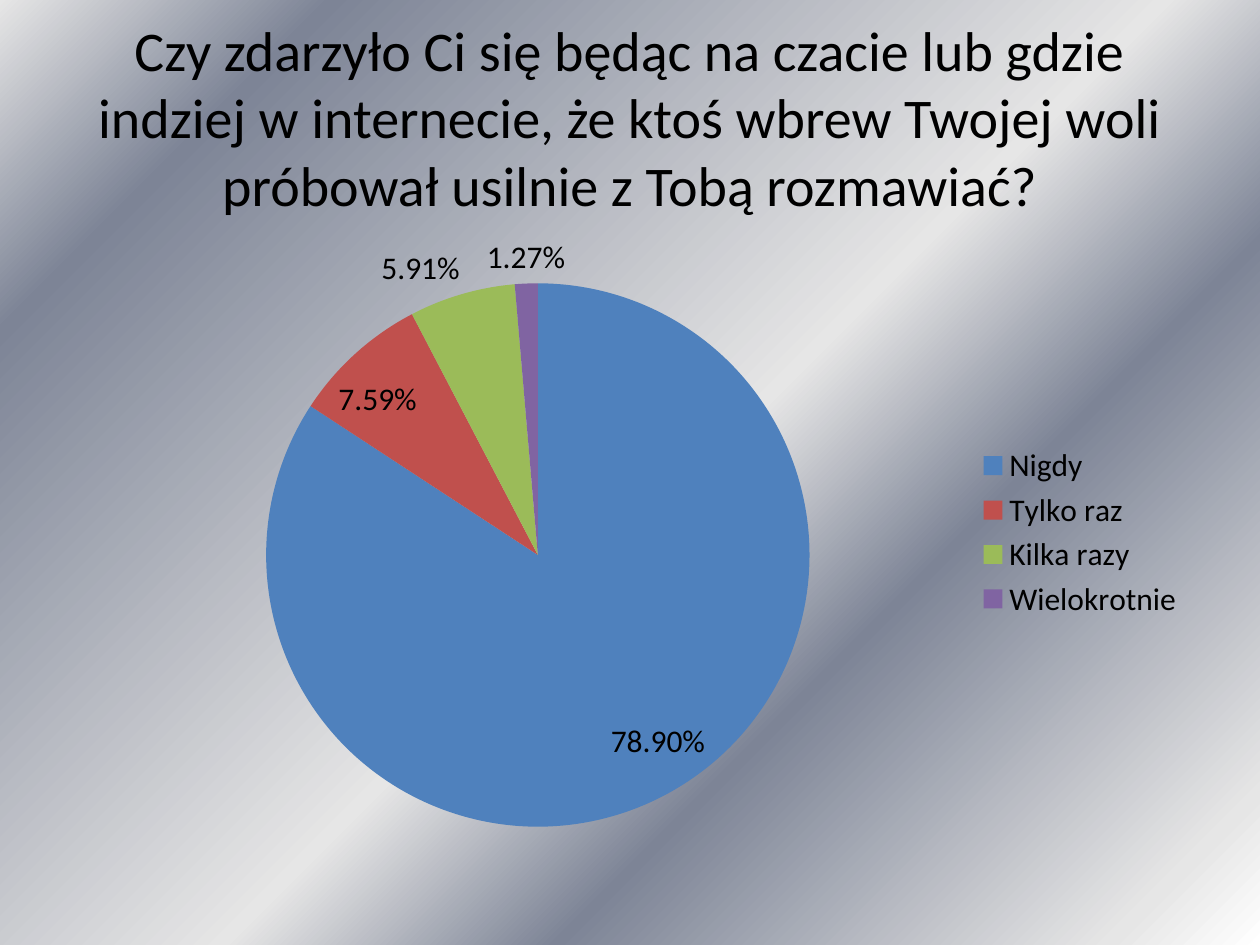
from dataclasses import dataclass

from lxml import etree
from pptx import Presentation
from pptx import util as u
from pptx.chart.data import CategoryChartData
from pptx.dml.color import RGBColor
from pptx.enum import chart as ch, text as tx
from pptx.oxml.ns import qn

PX = 9144  # one px is 1/100 inch


@dataclass(frozen=True)
class Theme:
    font: str = "Calibri"
    ink: str = "000000"
    head: int = 32
    body: int = 18
    slices: tuple = ("4F81BD", "C0504D", "9BBB59", "8064A2")
    stops: tuple = ((0, "FFFFFF"), (7, "E6E6E6"), (32, "7D8496"),
                    (47, "E6E6E6"), (85, "7D8496"), (100, "E6E6E6"))


THEME = Theme()
TITLE = ("Czy zdarzyło Ci się będąc na czacie lub gdzie indziej w internecie, "
         "że ktoś wbrew Twojej woli próbował usilnie z Tobą rozmawiać?")
ANSWERS = {"Nigdy": 0.789, "Tylko raz": 0.0759,
           "Kilka razy": 0.0591, "Wielokrotnie": 0.0127}


def box(*sides):
    """Turn left, top, width and height in px into EMU."""
    return [u.Emu(side * PX) for side in sides]


def style(font, size):
    font.name = THEME.font
    font.size = u.Pt(size)
    font.color.rgb = RGBColor.from_string(THEME.ink)


def add_text(slide, words, area, size=THEME.body,
             align=tx.PP_ALIGN.LEFT, anchor=tx.MSO_ANCHOR.TOP):
    frame = slide.shapes.add_textbox(*box(*area)).text_frame
    frame.word_wrap = True
    frame.vertical_anchor = anchor
    para = frame.paragraphs[0]
    para.alignment = align
    run = para.add_run()
    run.text = words
    style(run.font, size)


def paint_back(slide):
    """Fill the background with the metallic gradient, from bottom right."""
    fill = slide.background.fill
    fill.gradient()
    fill.gradient_angle = 135
    stops = next(slide.element.iter(qn("a:gsLst")))
    for old in list(stops):
        stops.remove(old)
    for pos, tint in THEME.stops:
        stop = etree.SubElement(stops, qn("a:gs"), pos=str(pos * 1000))
        etree.SubElement(stop, qn("a:srgbClr"), val=tint)


def add_pie(slide, answers, area):
    data = CategoryChartData(number_format="0.00%")
    data.categories = list(answers)
    data.add_series("Series 1", list(answers.values()))
    chart = slide.shapes.add_chart(
        ch.XL_CHART_TYPE.PIE, *box(*area), data).chart
    style(chart.font, THEME.body)
    chart.has_title = False
    chart.has_legend = True
    chart.legend.position = ch.XL_LEGEND_POSITION.RIGHT
    chart.legend.include_in_layout = False

    plot = chart.plots[0]
    plot.vary_by_categories = True
    series = plot.series[0]
    for i, tint in enumerate(THEME.slices):
        fill = series.points[i].format.fill
        fill.solid()
        fill.fore_color.rgb = RGBColor.from_string(tint)

    labels = series.data_labels
    labels.show_value = True
    labels.number_format = "0.00%"
    labels.number_format_is_linked = False
    labels.position = ch.XL_LABEL_POSITION.BEST_FIT
    style(labels.font, THEME.body)


def main():
    deck = Presentation()
    deck.slide_width, deck.slide_height = box(1000, 750)
    slide = deck.slides.add_slide(deck.slide_layouts[6])
    paint_back(slide)
    add_text(slide, TITLE, (50, 30, 900, 125), size=THEME.head,
             align=tx.PP_ALIGN.CENTER, anchor=tx.MSO_ANCHOR.MIDDLE)
    add_pie(slide, ANSWERS, (50, 175, 900, 495))
    deck.save("out.pptx")


if __name__ == "__main__":
    main()
